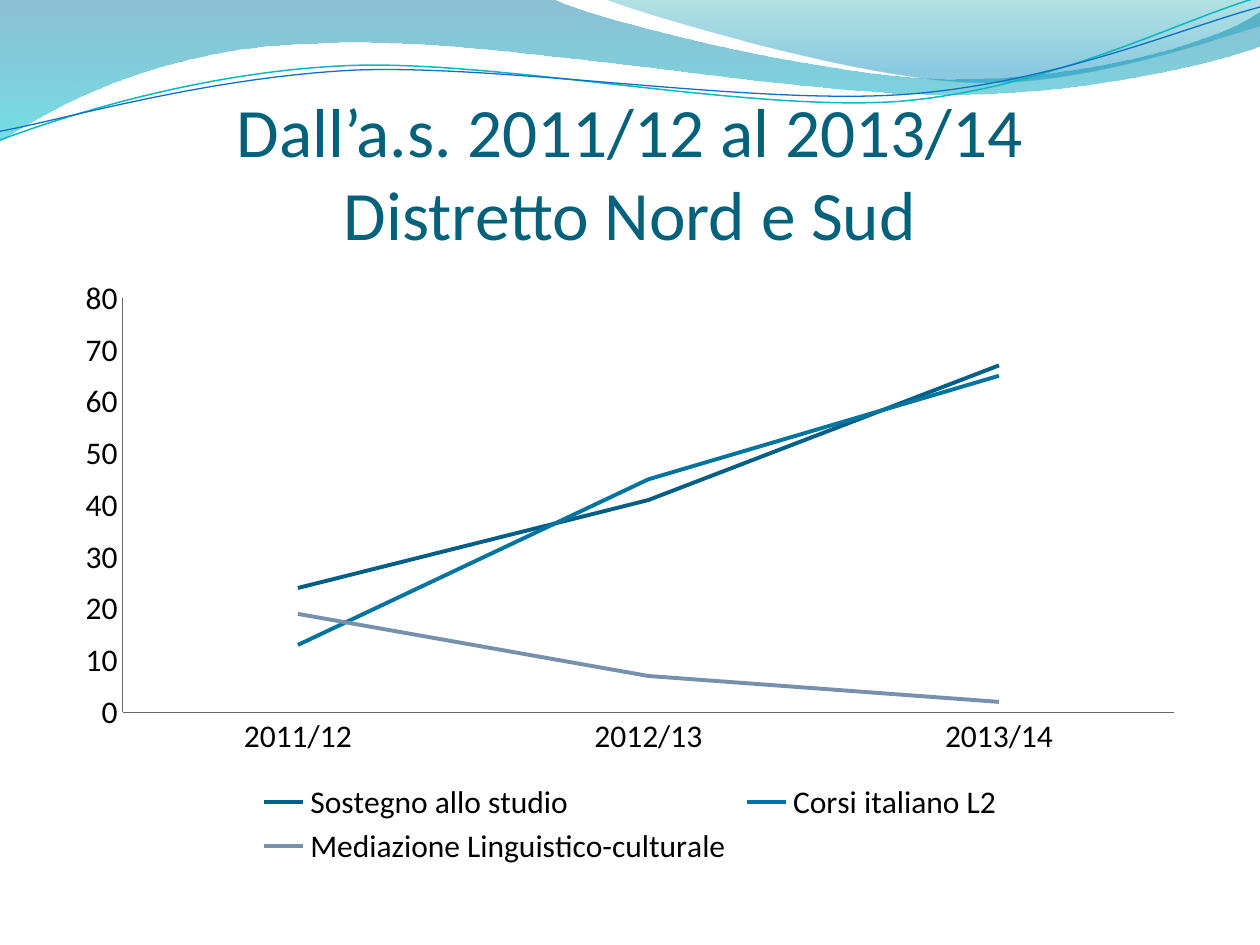
from math import cos, radians, sin

from lxml import etree
from pptx import Presentation
from pptx.chart.data import CategoryChartData
from pptx.dml.color import RGBColor
from pptx.enum.chart import XL_CHART_TYPE, XL_LEGEND_POSITION, XL_MARKER_STYLE, XL_TICK_MARK
from pptx.enum.text import MSO_ANCHOR, MSO_AUTO_SIZE, PP_ALIGN
from pptx.oxml.ns import qn
from pptx.util import Pt

LINE_CHART = XL_CHART_TYPE.LINE
BOTTOM_LEGEND = XL_LEGEND_POSITION.BOTTOM
NO_MARKER = XL_MARKER_STYLE.NONE
NO_TICK = XL_TICK_MARK.NONE
BOTTOM, CENTER, NO_FIT = MSO_ANCHOR.BOTTOM, PP_ALIGN.CENTER, MSO_AUTO_SIZE.NONE

THEME = {
    "font": "Calibri", "title_size": 39.6, "chart_size": 18,
    "title": "04617B", "text": "000000", "axis": "666666",
    "axis_width": 0.75, "series_width": 2.25,
}

TITLE = ["Dall’a.s. 2011/12 al 2013/14", "Distretto Nord e Sud"]
TITLE_BOX = (36, 55.5, 648, 90)
CHART_BOX = (36, 152.6, 648, 345.6)
CATEGORIES = ["2011/12", "2012/13", "2013/14"]
SERIES = [
    ("Sostegno allo studio", (24, 41, 67), "005F87"),
    ("Corsi italiano L2", (13, 45, 65), "0074A1"),
    ("Mediazione Linguistico-culturale", (19, 7, 2), "7591AB"),
]

WAVES = [
    {"box": (-0.7, -0.7, 721.4, 82), "angle": 0, "start": (0, 0), "segments": [
        (317, -0.5), (343, 12, 478, 45, 546, 45), (614, 45, 690, 27, 720, 6.5),
        (721, 26), (708, 32, 626, 55, 537, 54), (447, 54, 275, 20, 185, 24.5),
        (93, 26, 33, 60, -0.7, 81)],
     "gradient": [(0, "0074A1", 45), (1, "00C6CF", 55)]},
    {"box": (345, -0.7, 375, 50.4), "angle": 0, "start": (345, -0.7), "segments": [
        (366, 8, 491, 45, 554, 47), (616, 50, 692, 23, 720, 15), (720, 0)],
     "gradient": [(0, "00A1A9", 30), (0.8, "008BBF", 45)]},
    {"box": (-1.4, 15.8, 721.4, 51.1), "angle": 357.3, "start": (0, 80), "segments": [
        (35, 67, 114, 41, 199, 37.5), (284, 34, 427, 64, 513, 58),
        (600, 51, 675, 11, 719, -1.5)],
     "line": ("0AB8BF", 0.85)},
    {"box": (-1.4, 21.6, 722.2, 41.8), "angle": 357.3, "start": (0, 75), "segments": [
        (34, 69, 118, 44, 204, 40), (290, 37, 430, 60, 516, 54),
        (602, 48, 678, 15, 720, 4)],
     "line": ("0F6FC6", 0.75)},
]


def rgb(value):
    return RGBColor.from_string(value)


def style_font(font, size, color):
    font.name, font.size = THEME["font"], Pt(size)
    font.color.rgb = rgb(color)


def place(sp, box):
    sp.left, sp.top, sp.width, sp.height = map(Pt, box)


def to_local(x, y, box, angle):
    left, top, width, height = box
    turn = radians(-angle)
    dx, dy = x - left - width / 2, y - top - height / 2
    return (width / 2 + dx * cos(turn) - dy * sin(turn),
            height / 2 + dx * sin(turn) + dy * cos(turn))


def draw_outline(sp, wave):
    outline = next(sp._element.spPr.iter(qn("a:path")))
    closed = "gradient" in wave
    for child in list(outline):
        outline.remove(child)
    outline.set("w", str(sp.width))
    outline.set("h", str(sp.height))
    tags = {2: "a:lnTo", 6: "a:cubicBezTo"}
    steps = [("a:moveTo", wave["start"])]
    steps += [(tags[len(seg)], seg) for seg in wave["segments"]]
    for tag, values in steps:
        node = etree.SubElement(outline, qn(tag))
        for point in zip(values[::2], values[1::2]):
            x, y = to_local(*point, wave["box"], wave["angle"])
            pt = etree.SubElement(node, qn("a:pt"))
            pt.set("x", str(Pt(x)))
            pt.set("y", str(Pt(y)))
    if closed:
        etree.SubElement(outline, qn("a:close"))


def add_wave(s, wave):
    builder = s.shapes.build_freeform(*map(Pt, wave["start"]))
    builder.add_line_segments([tuple(map(Pt, seg[-2:])) for seg in wave["segments"]])
    sp = builder.convert_to_shape()
    place(sp, wave["box"])
    sp.rotation = wave["angle"]
    draw_outline(sp, wave)
    sp.shadow.inherit = False
    if "line" in wave:
        color, width = wave["line"]
        sp.fill.background()
        sp.line.color.rgb = rgb(color)
        sp.line.width = Pt(width)
        return
    sp.line.fill.background()
    sp.fill.gradient()
    sp.fill.gradient_angle = 270
    for stop, (position, color, _) in zip(sp.fill.gradient_stops, wave["gradient"]):
        stop.position = position
        stop.color.rgb = rgb(color)
    colors = list(sp._element.spPr.iter(qn("a:srgbClr")))
    for node, (_, _, opacity) in zip(colors, wave["gradient"]):
        etree.SubElement(node, qn("a:alpha")).set("val", str(opacity * 1000))


def add_title(s):
    title = s.shapes.title
    s.shapes._spTree.append(title._element)
    place(title, TITLE_BOX)
    tf = title.text_frame
    tf.word_wrap, tf.auto_size, tf.vertical_anchor = True, NO_FIT, BOTTOM
    tf.margin_left = tf.margin_right = tf.margin_bottom = 0
    tf.margin_top = Pt(3.6)
    p = tf.paragraphs[0]
    p.alignment = CENTER
    for i, line in enumerate(TITLE):
        if i:
            p.add_line_break()
        r = p.add_run()
        r.text = line
        style_font(r.font, THEME["title_size"], THEME["title"])


def add_line_chart(s):
    data = CategoryChartData()
    data.categories = CATEGORIES
    for name, values, _ in SERIES:
        data.add_series(name, values)
    chart = s.shapes.add_chart(LINE_CHART, *map(Pt, CHART_BOX), data).chart
    style_font(chart.font, THEME["chart_size"], THEME["text"])
    chart.has_title = False
    chart.has_legend = True
    chart.legend.position = BOTTOM_LEGEND
    chart.legend.include_in_layout = False
    chart.plots[0].vary_by_categories = False
    for axis in (chart.category_axis, chart.value_axis):
        axis.has_major_gridlines = False
        axis.major_tick_mark = axis.minor_tick_mark = NO_TICK
        axis.format.line.color.rgb = rgb(THEME["axis"])
        axis.format.line.width = Pt(THEME["axis_width"])
    for series, (_, _, color) in zip(chart.plots[0].series, SERIES):
        series.smooth = False
        series.marker.style = NO_MARKER
        series.format.line.color.rgb = rgb(color)
        series.format.line.width = Pt(THEME["series_width"])


def main():
    prs = Presentation()
    prs.slide_width, prs.slide_height = Pt(720), Pt(540)
    s = prs.slides.add_slide(prs.slide_layouts[5])
    for wave in WAVES:
        add_wave(s, wave)
    add_title(s)
    add_line_chart(s)
    prs.save("out.pptx")


if __name__ == "__main__":
    main()
